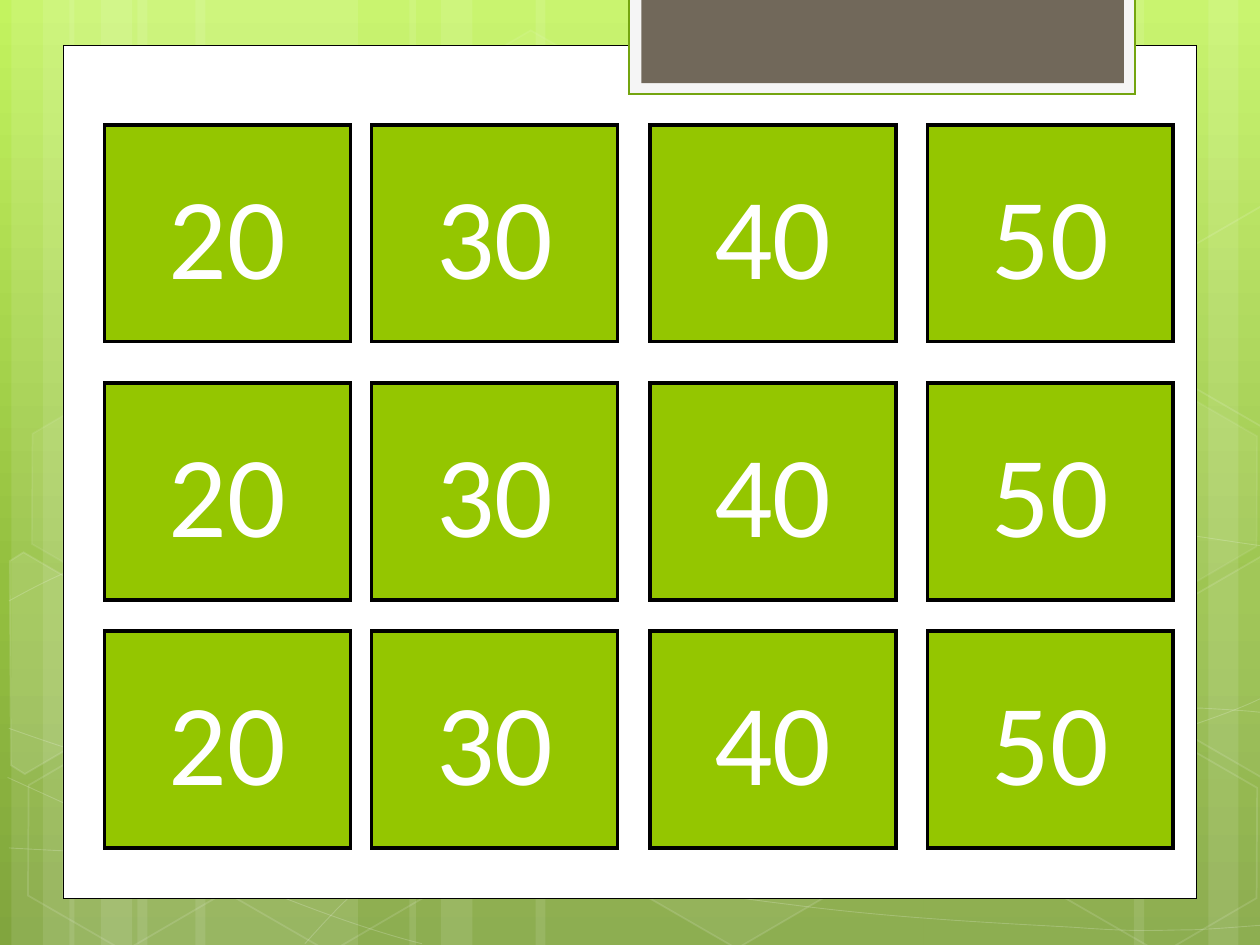
from copy import deepcopy
from dataclasses import dataclass
from itertools import product
from math import cos, radians, sin
from typing import NamedTuple, Optional

from lxml import etree
from pptx import Presentation, util as u
from pptx.dml.color import RGBColor
from pptx.enum import shapes, text
from pptx.oxml.ns import qn


@dataclass(frozen=True)
class Theme:
    white: str = "FFFFFF"
    black: str = "000000"
    button: str = "94C600"
    tab: str = "71685A"
    tab_frame: str = "F5F5F5"
    tab_edge: str = "74A510"
    sky: tuple = ((0, "C3F35F"), (0.62, "93BF3F"), (1, "81A53E"))
    font: str = "Calibri"
    number_size: int = 66


class Paint(NamedTuple):
    color: str
    opacity: int = 100


class Outline(NamedTuple):
    paint: Paint
    width: float


class Box(NamedTuple):
    left: float
    top: float
    width: float
    height: float


class Curve(NamedTuple):
    points: tuple  # a start point, then three Bézier points per segment
    straight: Optional[int] = None  # index of a point reached by a straight line


class Hexagon(NamedTuple):
    left: float
    top: float
    fill_opacity: Optional[int]
    line_opacity: int


class CutHexagon(NamedTuple):
    center: tuple
    points: tuple
    fill_opacity: Optional[int]


THEME = Theme()
SLIDE = Box(0, 0, 10, 7.5)
TILT = 30  # degrees, shared by all hexagons

# Left edge and width of each pale vertical stripe
STRIPES = (
    (1.09, 1.75), (0.09, 0.5), (0.34, 0.83), (1.55, 1.75), (0.55, 0.5), (0.8, 0.83),
    (7.33, 1.75), (9.59, 0.5), (9, 0.83), (4.25, 3.08), (3.25, 0.5), (3.5, 0.83),
)

CURVES = (
    Curve(((0.07, 6.73), (0.61, 6.76), (1.15, 6.79), (1.9, 6.78),
           (2.65, 6.77), (3.58, 6.75), (4.58, 6.65), (5.58, 6.55), (7, 6.36), (7.92, 6.17),
           (8.83, 5.98), (9.77, 5.68), (10.07, 5.51))),
    Curve(((0.07, 4.77), (0.36, 4.61), (0.65, 4.46), (1.21, 4.31),
           (1.78, 4.16), (2.59, 3.94), (3.47, 3.87), (4.36, 3.8), (5.44, 3.79), (6.54, 3.87),
           (7.64, 3.95), (9.47, 4.26), (10.07, 4.34))),
    Curve(((0.06, 6.17), (1.27, 6.72), (2.47, 7.27), (3.35, 7.49))),
    Curve(((0.07, 5.78), (0.38, 5.89), (0.7, 6), (1.28, 6.16),
           (1.86, 6.31), (2.73, 6.56), (3.57, 6.73), (4.4, 6.9), (5.45, 7.08), (6.28, 7.18),
           (7.11, 7.29), (8, 7.33), (8.53, 7.36), (9.06, 7.4), (9.19, 7.38), (9.45, 7.38),
           (9.71, 7.37), (9.89, 7.35), (10.07, 7.34))),
    Curve(((2.42, 7.49), (2.6, 7.29), (2.78, 7.09), (3.02, 6.91),
           (3.26, 6.72), (3.6, 6.53), (3.88, 6.39), (4.16, 6.25), (4.33, 6.19), (4.69, 6.09),
           (5.06, 5.99), (5.73, 5.85), (6.08, 5.78), (6.44, 5.71), (6.49, 5.71), (6.8, 5.69),
           (7.11, 5.66), (7.6, 5.63), (7.94, 5.62), (8.29, 5.61), (8.86, 5.62), (8.86, 5.62),
           (9.53, 5.62), (9.71, 5.63), (9.88, 5.64), (9.97, 5.65),
           (10.06, 5.66), (10.03, 5.65), (10.06, 5.66)), straight=22),
)

HEXAGONS = (
    Hexagon(3.34, 0.36, 4, 8), Hexagon(4.97, 5.89, 6, 12), Hexagon(0.11, 5.91, None, 12),
    Hexagon(0.14, 3.12, 7, 8), Hexagon(1.74, 5.92, None, 12), Hexagon(7.53, 4.53, 10, 12),
    Hexagon(8.34, 5.93, None, 12), Hexagon(8.34, 3.14, 7, 8),
)

# Hexagons cut off by the slide edges
CUT_HEXAGONS = (
    CutHexagon((0.36, 5.36), ((0.08, 4.45), (0.19, 4.38), (0.96, 4.83), (0.95, 5.7),
                              (0.2, 6.14), (0.09, 6.07)), 10),
    CutHexagon((9.85, 5.2), ((9.26, 4.85), (10.02, 4.41), (10.09, 4.46), (10.09, 6.13),
                             (10.02, 6.17), (9.26, 5.73)), 4),
    CutHexagon((9.85, 2.41), ((9.26, 2.07), (10.02, 1.63), (10.1, 1.68), (10.09, 3.35),
                              (10.02, 3.39), (9.26, 2.95)), None),
)

# Score buttons: one column per value, one row per category
COLUMNS = ((0.83, "20"), (2.95, "30"), (5.16, "40"), (7.36, "50"))
ROWS = (0.99, 3.04, 5.01)
BUTTON_WIDTH, BUTTON_HEIGHT = 1.95, 1.72


def apply_paint(fill, paint: Paint, holder) -> None:
    fill.solid()
    fill.fore_color.rgb = RGBColor.from_string(paint.color)
    if paint.opacity < 100:
        color = holder.find(qn("a:solidFill")).find(qn("a:srgbClr"))
        etree.SubElement(color, qn("a:alpha"), val=str(paint.opacity * 1000))


def style(shape, fill: Optional[Paint], outline: Optional[Outline]) -> None:
    shape.shadow.inherit = False
    properties = shape.element.spPr
    if fill:
        apply_paint(shape.fill, fill, properties)
    else:
        shape.fill.background()
    if outline:
        shape.line.width = u.Pt(outline.width)
        line = properties.find(qn("a:ln"))
        apply_paint(shape.line.fill, outline.paint, line)
        etree.SubElement(line, qn("a:miter"), lim="800000")
    else:
        shape.line.fill.background()


def add_preset(parent, kind, box: Box, fill: Optional[Paint], outline: Optional[Outline] = None):
    shape = parent.shapes.add_shape(kind, *(u.Inches(length) for length in box))
    style(shape, fill, outline)
    return shape


def add_path(parent, points, closed: bool, fill: Optional[Paint], outline: Outline):
    start, *others = [(u.Inches(x), u.Inches(y)) for x, y in points]
    builder = parent.shapes.build_freeform(*start)
    builder.add_line_segments(others, close=closed)
    shape = builder.convert_to_shape()
    style(shape, fill, outline)
    return shape


def add_curve(parent, curve: Curve) -> None:
    """Draw the points as a path, then join each three into a Bézier segment."""
    shape = add_path(parent, curve.points, False, None, Outline(white(20), 0.5))
    steps = list(shape.element.iter(qn("a:lnTo")))
    if curve.straight:
        del steps[curve.straight - 1]
    for first, second, third in zip(*[iter(steps)] * 3):
        bezier = etree.Element(qn("a:cubicBezTo"))
        first.addprevious(bezier)
        for step in (first, second, third):
            bezier.append(step[0])
            step.getparent().remove(step)


def add_cut_hexagon(parent, item: CutHexagon) -> None:
    """Turn the corners upright about the centre, then tilt the whole shape."""
    cx, cy = item.center
    c, s = cos(radians(TILT)), sin(radians(TILT))
    upright = [(cx + (x - cx) * c + (y - cy) * s, cy - (x - cx) * s + (y - cy) * c)
               for x, y in item.points + item.points[:1]]
    shape = add_path(parent, upright, True, white(item.fill_opacity), Outline(white(12), 1))
    shape.rotation = TILT


def white(opacity: Optional[int]) -> Optional[Paint]:
    return Paint(THEME.white, opacity) if opacity else None


def paint_background(slide) -> None:
    fill = slide.background.fill
    fill.gradient()
    fill.gradient_angle = 270
    stop_list = next(slide.element.iter(qn("a:gsLst")))
    stop_list.append(deepcopy(stop_list[-1]))
    for stop, (position, color) in zip(fill.gradient_stops, THEME.sky):
        stop.position = position
        stop.color.rgb = RGBColor.from_string(color)


def draw_backdrop(slide) -> None:
    rectangle = shapes.MSO_SHAPE.RECTANGLE
    pattern = slide.shapes.add_group_shape()
    for left, width in STRIPES:
        add_preset(pattern, rectangle, Box(left, 0, width, SLIDE.height), white(10))
    for curve in CURVES:
        add_curve(pattern, curve)
    for item in HEXAGONS:
        hexagon = add_preset(pattern, shapes.MSO_SHAPE.HEXAGON,
                             Box(item.left, item.top, 1.75, 1.52),
                             white(item.fill_opacity), Outline(white(item.line_opacity), 1))
        hexagon.adjustments[0], hexagon.adjustments[1] = 0.285, 1.155
        hexagon.rotation = TILT
    for item in CUT_HEXAGONS:
        add_cut_hexagon(pattern, item)

    # White panel and the tab hanging over its top edge
    add_preset(slide, rectangle, Box(0.5, 0.36, 9, 6.77), white(100),
               Outline(Paint(THEME.black), 0.5))
    add_preset(slide, rectangle, Box(4.99, -0.02, 4.02, 0.77), Paint(THEME.tab_frame),
               Outline(Paint(THEME.tab_edge), 1.25))
    add_preset(slide, rectangle, Box(5.09, -0.02, 3.83, 0.68), Paint(THEME.tab))


def add_score_button(slide, left: float, top: float, score: str) -> None:
    button = add_preset(slide, shapes.MSO_SHAPE.ACTION_BUTTON_CUSTOM,
                        Box(left, top, BUTTON_WIDTH, BUTTON_HEIGHT),
                        Paint(THEME.button), Outline(Paint(THEME.black), 2))
    frame = button.text_frame
    frame.vertical_anchor = text.MSO_ANCHOR.MIDDLE
    label = frame.paragraphs[0]
    label.text = score
    label.alignment = text.PP_ALIGN.CENTER
    label.font.name = THEME.font
    label.font.size = u.Pt(THEME.number_size)
    label.font.color.rgb = RGBColor.from_string(THEME.white)


def main() -> None:
    deck = Presentation()
    deck.slide_width, deck.slide_height = u.Inches(SLIDE.width), u.Inches(SLIDE.height)
    slide = deck.slides.add_slide(deck.slide_layouts[6])
    paint_background(slide)
    draw_backdrop(slide)
    for top, (left, score) in product(ROWS, COLUMNS):
        add_score_button(slide, left, top, score)
    deck.save("out.pptx")


if __name__ == "__main__":
    main()
